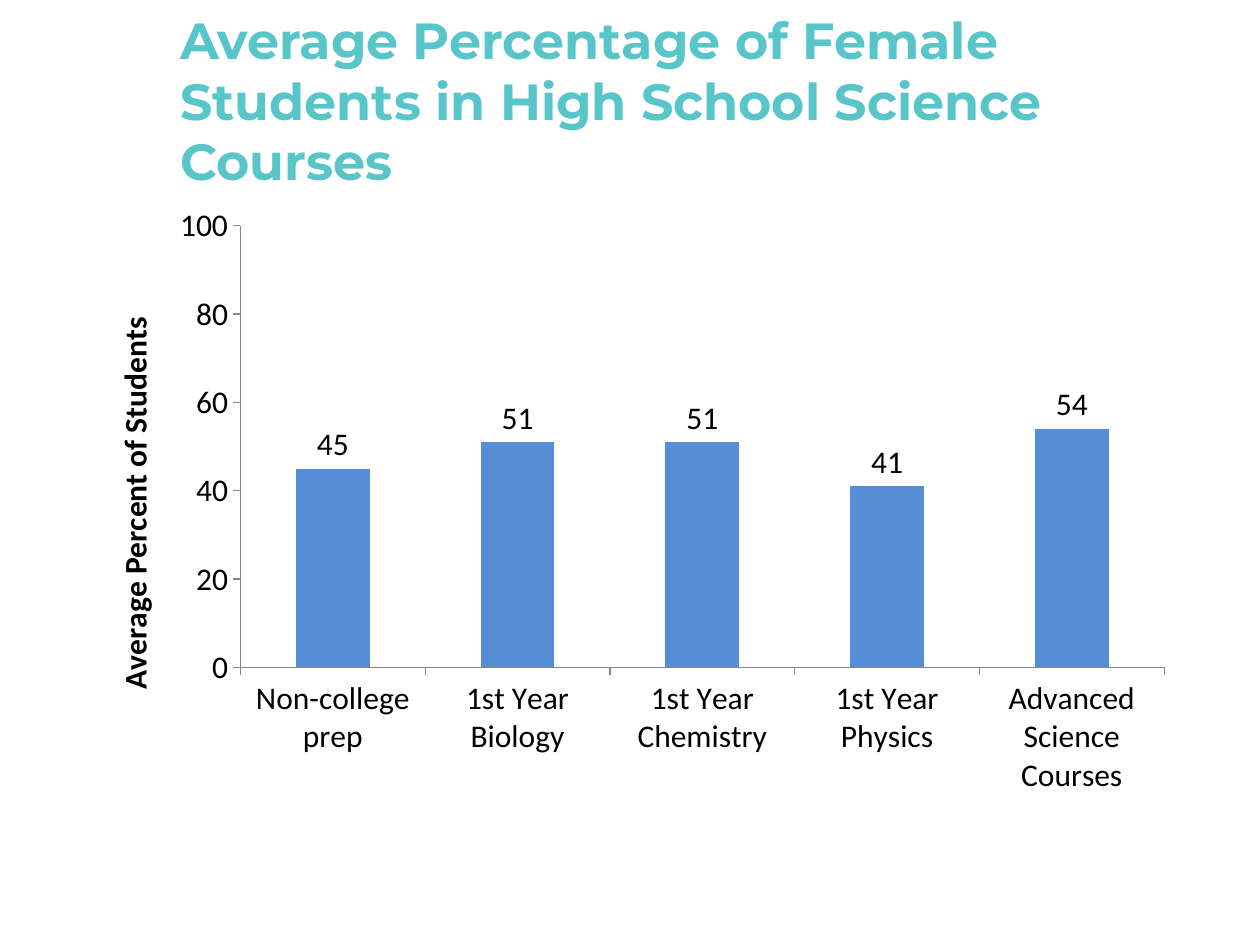
from lxml.etree import SubElement
from pptx import Presentation
from pptx.chart.data import CategoryChartData
from pptx.dml.color import RGBColor
from pptx.enum.chart import XL_CHART_TYPE, XL_LABEL_POSITION, XL_TICK_MARK
from pptx.enum.text import MSO_ANCHOR
from pptx.oxml.ns import qn
from pptx.util import Pt


def color(hex_value):
    return RGBColor.from_string(hex_value)


def place(parent, position, **fractions):
    """Fix a chart part at fractions of the chart's size."""
    for old in parent.findall(qn("c:layout")):
        parent.remove(old)
    layout = parent.makeelement(qn("c:layout"))
    parent.insert(position, layout)
    manual = SubElement(layout, qn("c:manualLayout"))
    if "w" in fractions:
        SubElement(manual, qn("c:layoutTarget")).set("val", "inner")
    for tag, value in {"xMode": "edge", "yMode": "edge", **fractions}.items():
        SubElement(manual, qn(f"c:{tag}")).set("val", str(value))


prs = Presentation()
prs.slide_width, prs.slide_height = Pt(720), Pt(540)
slide = prs.slides.add_slide(prs.slide_layouts[6])

# Chart
courses = CategoryChartData()
courses.categories = ["Non-college prep", "1st Year Biology", "1st Year Chemistry",
                      "1st Year Physics", "Advanced Science Courses"]
courses.add_series("Series 1", [45, 51, 51, 41, 54])
chart = slide.shapes.add_chart(XL_CHART_TYPE.COLUMN_CLUSTERED, Pt(42), Pt(111.5),
                               Pt(636), Pt(350.5), courses).chart
chart.has_legend = False
chart.has_title = False
chart_font = {"name": "Calibri", "size": Pt(18)}
for attribute, value in chart_font.items():
    setattr(chart.font, attribute, value)
chart.font.color.rgb = color("000000")

percent_axis = chart.value_axis
axis_format = {"minimum_scale": 0, "maximum_scale": 100, "major_unit": 20,
               "has_major_gridlines": False}
for attribute, value in axis_format.items():
    setattr(percent_axis, attribute, value)
for axis in (chart.category_axis, percent_axis):
    axis.major_tick_mark = XL_TICK_MARK.OUTSIDE
    axis.format.line.color.rgb = color("868686")
    axis.format.line.width = Pt(0.75)

axis_title = percent_axis.axis_title
axis_title.text_frame.text = "Average Percent of Students"
title_body = axis_title.text_frame._txBody.find(qn("a:bodyPr"))
title_body.set("rot", "-5400000")
title_body.set("vert", "horz")
title_font = axis_title.text_frame.paragraphs[0].runs[0].font
for attribute, value in {**chart_font, "bold": True}.items():
    setattr(title_font, attribute, value)
title_font.color.rgb = color("000000")
place(axis_title._element, 1, x=0.03, y=0.19)

columns = chart.plots[0]
columns.gap_width = 150
columns.vary_by_categories = False
bars = columns.series[0]
bars.format.fill.solid()
bars.format.fill.fore_color.rgb = color("558ED5")
columns.has_data_labels = True
columns.data_labels.show_value = True
columns.data_labels.position = XL_LABEL_POSITION.OUTSIDE_END
place(chart._chartSpace.chart.plotArea, 0, x=0.15, y=0.05, w=0.83, h=0.72)

# Heading
heading = slide.shapes.add_textbox(Pt(96), Pt(12), Pt(600), Pt(90)).text_frame
heading.word_wrap = True
heading.vertical_anchor = MSO_ANCHOR.MIDDLE
heading.text = "Average Percentage of Female Students in High School Science Courses"
heading_font = heading.paragraphs[0].runs[0].font
for attribute, value in {"name": "Montserrat", "size": Pt(29), "bold": True}.items():
    setattr(heading_font, attribute, value)
heading_font.color.rgb = color("58C5C9")

prs.save("out.pptx")
